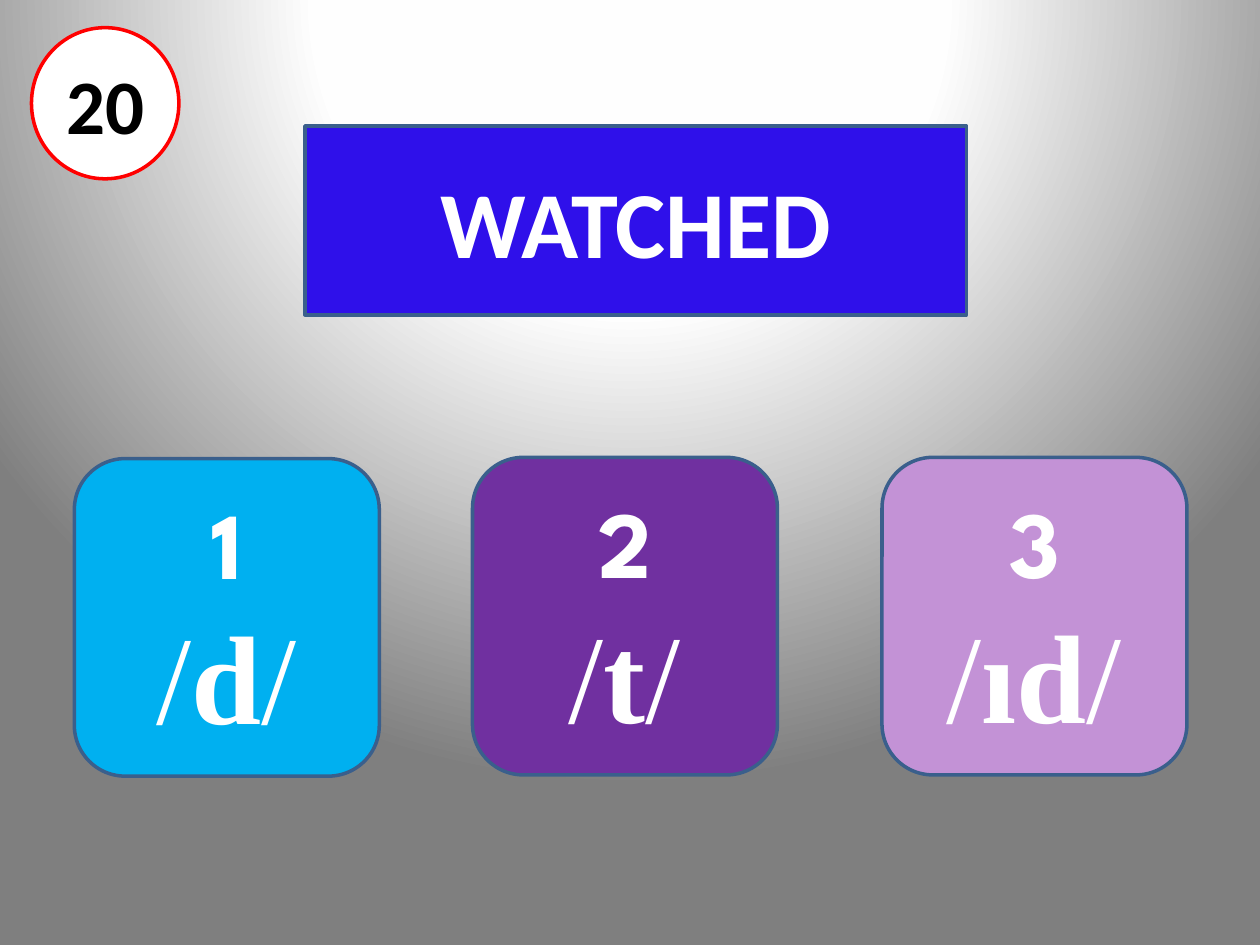
from dataclasses import dataclass

from lxml.etree import SubElement
from pptx import Presentation
from pptx.dml.color import RGBColor
from pptx.enum.shapes import MSO_SHAPE
from pptx.enum.text import MSO_ANCHOR, PP_ALIGN
from pptx.oxml.ns import qn
from pptx.util import Inches, Pt

WIDTH, HEIGHT = Inches(10), Inches(7.5)


@dataclass(frozen=True)
class Theme:
    """Colours, fonts and type sizes of the quiz."""
    white: str = "FFFFFF"
    black: str = "000000"
    edge: str = "3A5F8C"
    badge_edge: str = "FF0000"
    banner: str = "2F10EA"
    cards: tuple = ("00B0F0", "7030A0", "C392D6")
    backdrop: tuple = ((0, "FFFFFF"), (40, "FEFEFE"), (100, "7F7F7F"))
    body_font: str = "Calibri"
    number_font: str = "League Spartan"
    sound_font: str = "Times New Roman"
    badge_size: int = 44
    title_size: int = 54
    sound_size: int = 72
    line_width: int = 2


THEME = Theme()


def share(box):
    """Turn a box given in percent of the slide into lengths."""
    left, top, width, height = box
    return (int(WIDTH * left / 100), int(HEIGHT * top / 100),
            int(WIDTH * width / 100), int(HEIGHT * height / 100))


def add_panel(page, kind, box, fill, edge=THEME.edge):
    """Add a flat outlined shape and return its text frame."""
    panel = page.shapes.add_shape(kind, *share(box))
    panel.shadow.inherit = False
    panel.fill.solid()
    panel.fill.fore_color.rgb = RGBColor.from_string(fill)
    panel.line.color.rgb = RGBColor.from_string(edge)
    panel.line.width = Pt(THEME.line_width)
    frame = panel.text_frame
    frame.word_wrap = True
    frame.vertical_anchor = MSO_ANCHOR.MIDDLE
    return frame


def add_span(para, text, font, size, color=THEME.white, bold=True):
    """Add one styled run to a centred paragraph."""
    para.alignment = PP_ALIGN.CENTER
    span = para.add_run()
    span.text = text
    span.font.name = font
    span.font.size = Pt(size)
    span.font.bold = bold
    span.font.color.rgb = RGBColor.from_string(color)


def paint_backdrop(page):
    """Fill the background with a circular glow centred above the page."""
    page.background.fill.gradient()
    gradient = page.element.find(".//" + qn("a:gradFill"))
    for child in list(gradient):
        gradient.remove(child)
    stops = SubElement(gradient, qn("a:gsLst"))
    for percent, color in THEME.backdrop:
        stop = SubElement(stops, qn("a:gs"), pos=str(percent * 1000))
        SubElement(stop, qn("a:srgbClr"), val=color)
    circle = SubElement(gradient, qn("a:path"), path="circle")
    SubElement(circle, qn("a:fillToRect"), l="50000", t="-80000", r="50000", b="180000")


def add_answer(page, box, number, sound, fill):
    """Add an answer card with its number above its sound."""
    frame = add_panel(page, MSO_SHAPE.ROUNDED_RECTANGLE, box, fill)
    add_span(frame.paragraphs[0], number, THEME.number_font, THEME.title_size)
    para = frame.add_paragraph()
    for text, bold in (("/", False), (sound, True), ("/", False)):
        add_span(para, text, THEME.sound_font, THEME.sound_size, bold=bold)


def add_banner(page, box, word):
    """Add the banner with the word to pronounce."""
    frame = add_panel(page, MSO_SHAPE.RECTANGLE, box, THEME.banner)
    add_span(frame.paragraphs[0], word, THEME.body_font, THEME.title_size)


def add_badge(page, box, number):
    """Add the round question number."""
    frame = add_panel(page, MSO_SHAPE.OVAL, box, THEME.white, THEME.badge_edge)
    frame.margin_left = frame.margin_right = 0
    add_span(frame.paragraphs[0], number, THEME.body_font, THEME.badge_size, THEME.black)


def add_question(deck, number, word, sounds):
    """Add a question slide with three answer cards."""
    page = deck.slides.add_slide(deck.slide_layouts[6])
    paint_backdrop(page)
    corners = ((5.9, 48.53), (37.5, 48.4), (70, 48.4))
    cards = list(zip(corners, sounds, THEME.cards))
    for index in reversed(range(len(cards))):
        corner, sound, fill = cards[index]
        add_answer(page, (*corner, 24.2, 33.6), str(index + 1), sound, fill)
    add_banner(page, (24.2, 13.33, 52.5, 20), word)
    add_badge(page, (2.5, 2.93, 11.7, 16), number)


def main():
    """Build and save the deck."""
    deck = Presentation()
    deck.slide_width, deck.slide_height = WIDTH, HEIGHT
    add_question(deck, "20", "WATCHED", ("d", "t", "ıd"))
    deck.save("out.pptx")


if __name__ == "__main__":
    main()
